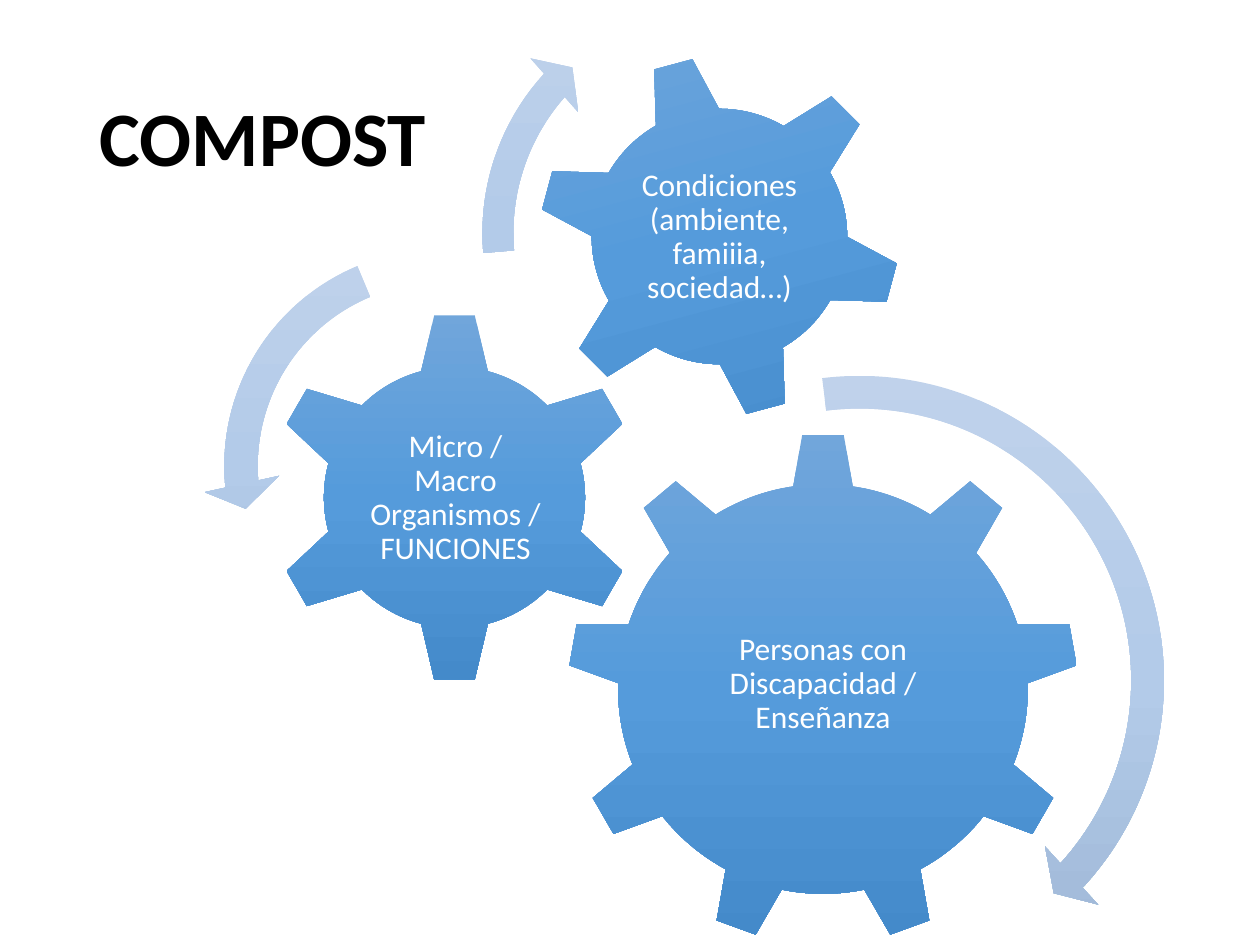
from lxml import etree
from pptx import Presentation
from pptx.dml.color import RGBColor
from pptx.enum.shapes import MSO_SHAPE
from pptx.enum.text import MSO_ANCHOR, PP_ALIGN
from pptx.oxml.ns import qn
from pptx.util import Pt

GEAR_6, GEAR_9 = MSO_SHAPE.GEAR_6, MSO_SHAPE.GEAR_9
CLOCKWISE, COUNTERCLOCKWISE = MSO_SHAPE.CIRCULAR_ARROW, MSO_SHAPE.LEFT_CIRCULAR_ARROW
MIDDLE, LEFT, CENTER = MSO_ANCHOR.MIDDLE, PP_ALIGN.LEFT, PP_ALIGN.CENTER

BLACK = RGBColor(0x00, 0x00, 0x00)
WHITE = RGBColor(0xFF, 0xFF, 0xFF)
GEAR_BLUES = (RGBColor(0x71, 0xA6, 0xDB), RGBColor(0x55, 0x9B, 0xDB), RGBColor(0x44, 0x8A, 0xCA))
ARROW_BLUES = (RGBColor(0xC0, 0xD2, 0xEB), RGBColor(0xB3, 0xCB, 0xE9), RGBColor(0x9B, 0xB4, 0xD3))

PX_PER_INCH = 126
SLIDE_SIZE = (1260, 945)
TITLE_BOX = (87, 50, 1086, 183)

GEARS = [
    (GEAR_9, (567, 433, 512, 512), 0, (103, 120, 306, 263), "Personas con Discapacidad / Enseñanza"),
    (GEAR_6, (268, 311, 373, 373), 0, (95, 95, 185, 184), "Micro / Macro Organismos / FUNCIONES"),
    (GEAR_6, (537, 54, 365, 365), 345, (80, 81, 205, 205), "Condiciones (ambiente, famiiia, sociedad…)"),
]
ARROWS = [
    (CLOCKWISE, (532, 353, 655, 655), (0.05, 2.99, 25.56, 157.79, 0.06)),
    (COUNTERCLOCKWISE, (203, 228, 476, 476), (0.07, 4.3, 104.89, 148.38, 0.08)),
    (CLOCKWISE, (462, -24, 514, 514), (0.06, 3.94, 133.14, 105.08, 0.07)),
]


def px(length):
    """Convert whole pixels to EMU."""
    return round(length * 914400 / PX_PER_INCH)


def write_text(frame, text, paragraph_format, font_format, color):
    """Fill a text frame with one vertically centred paragraph."""
    frame.word_wrap = True
    frame.vertical_anchor = MIDDLE
    frame.text = text
    paragraph = frame.paragraphs[0]
    for name, value in paragraph_format.items():
        setattr(paragraph, name, value)
    font = paragraph.runs[0].font
    for name, value in font_format.items():
        setattr(font, name, value)
    font.color.rgb = color


def shade(shape, blues):
    """Give a shape a three-stop vertical gradient without line or shadow."""
    shape.shadow.inherit = False
    shape.line.fill.background()
    shape.fill.gradient()
    shape.fill.gradient_angle = 270
    stop_list = shape._element.spPr.find(qn("a:gradFill")).find(qn("a:gsLst"))
    etree.SubElement(stop_list, qn("a:gs"), pos="100000")
    for stop, blue, position in zip(shape.fill.gradient_stops, blues, (0, 0.5, 1)):
        stop.color.rgb = blue
        stop.position = position


def add_title(slide, box):
    """Place the slide heading in its placeholder."""
    title = slide.shapes.title
    for side, length in zip(("left", "top", "width", "height"), box):
        setattr(title, side, px(length))
    write_text(title.text_frame, "COMPOST", {"alignment": LEFT, "line_spacing": 0.9},
               {"name": "Calibri", "size": Pt(44), "bold": True}, BLACK)


def add_gear(slide, kind, box, rotation, label_box, text):
    """Draw a gear with an upright label placed relative to its box."""
    gear = slide.shapes.add_shape(kind, *map(px, box))
    gear.rotation = rotation
    shade(gear, GEAR_BLUES)
    left, top, width, height = label_box
    label = slide.shapes.add_textbox(px(box[0] + left), px(box[1] + top), px(width), px(height))
    frame = label.text_frame
    for side in ("left", "top", "right", "bottom"):
        setattr(frame, f"margin_{side}", px(4))
    write_text(frame, text, {"alignment": CENTER, "line_spacing": 0.9, "space_after": Pt(6)},
               {"name": "Calibri", "size": Pt(18)}, WHITE)


def add_turn_arrow(slide, kind, box, adjustments):
    """Draw the curved arrow that shows how a gear turns."""
    arrow = slide.shapes.add_shape(kind, *map(px, box))
    for index, value in enumerate(adjustments):
        arrow.adjustments[index] = value
    shade(arrow, ARROW_BLUES)


def main():
    """Build the gear slide and save it."""
    deck = Presentation()
    deck.slide_width, deck.slide_height = map(px, SLIDE_SIZE)
    slide = deck.slides.add_slide(deck.slide_layouts[5])
    add_title(slide, TITLE_BOX)
    for gear in GEARS:
        add_gear(slide, *gear)
    for arrow in ARROWS:
        add_turn_arrow(slide, *arrow)
    deck.save("out.pptx")


if __name__ == "__main__":
    main()
